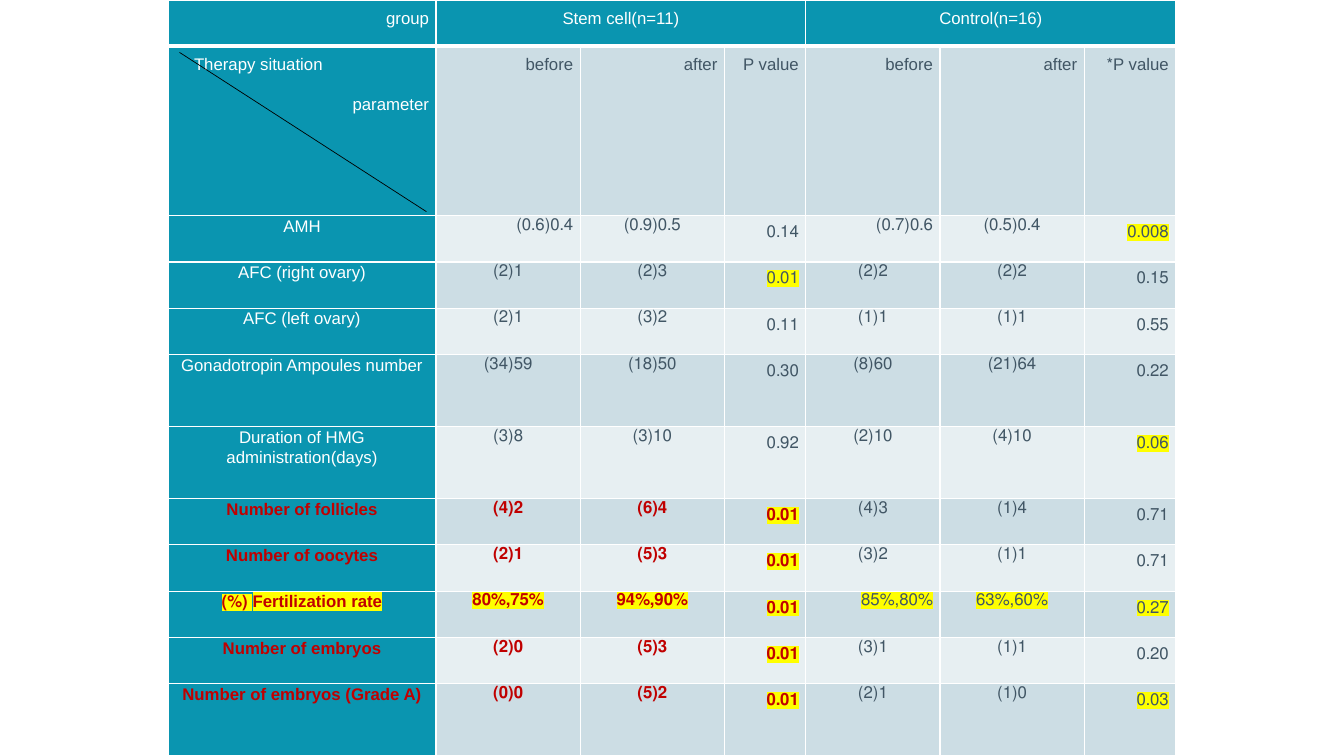
"""Builds a slide with a table comparing stem cell and control groups before and after therapy."""
import pptx
import pptx.util
import pptx.dml.color
import pptx.enum.shapes
import pptx.enum.text
import pptx.oxml.ns
import lxml.etree

Pt = pptx.util.Pt
ALIGN = pptx.enum.text.PP_ALIGN
COLORS = {"teal": "0A95B0", "dark": "CCDDE4", "light": "E7EFF2", "white": "FFFFFF",
          "slate": "415665", "red": "C00000", "yellow": "FFFF00", "black": "000000"}


def rgb(name):
    return pptx.dml.color.RGBColor.from_string(COLORS[name])


def add_text(p, text, color="slate", bold=False, highlight=False,
             align=ALIGN.CENTER, spacing=1.07, rtl=True, indent=0):
    p.alignment = align
    p.line_spacing = spacing
    p.space_after = Pt(8)
    pPr = p._p.get_or_add_pPr()
    pPr.set("rtl", str(int(rtl)))
    pPr.set("marL", str(Pt(indent)))
    r = p.add_run()
    r.text = text
    r.font.size = Pt(12)
    r.font.bold = bold
    r.font.color.rgb = rgb(color)
    if highlight:
        mark = lxml.etree.SubElement(r._r.get_or_add_rPr(), pptx.oxml.ns.qn("a:highlight"))
        lxml.etree.SubElement(mark, pptx.oxml.ns.qn("a:srgbClr"), val=COLORS["yellow"])
    r.font.name = "Arial"


prs = pptx.Presentation()
prs.slide_width, prs.slide_height = Pt(960), Pt(540)
s = prs.slides.add_slide(prs.slide_layouts[6])

col_widths = [191.5, 103, 103, 58.2, 95.8, 103, 65.5]
row_heights = [33.1, 121, 33.1, 33.1, 33.1, 51.4, 51.4, 33.1, 33.1, 33.1, 33.1, 51.4]
parameters = [
    ["AMH", "0.4(0.6)", "0.5(0.9)", "0.14", "0.6(0.7)", "0.4(0.5)", "0.008"],
    ["AFC (right ovary)", "1(2)", "3(2)", "0.01", "2(2)", "2(2)", "0.15"],
    ["AFC (left ovary)", "1(2)", "2(3)", "0.11", "1(1)", "1(1)", "0.55"],
    ["Gonadotropin Ampoules number", "59(34)", "50(18)", "0.30", "60(8)", "64(21)", "0.22"],
    ["Duration of HMG administration(days)", "8(3)", "10(3)", "0.92", "10(2)", "10(4)", "0.06"],
    ["Number of follicles", "2(4)", "4(6)", "0.01", "3(4)", "4(1)", "0.71"],
    ["Number of oocytes", "1(2)", "3(5)", "0.01", "2(3)", "1(1)", "0.71"],
    ["Fertilization rate (%)", "75%,80%", "90%,94%", "0.01", "80%,85%", "60%,63%", "0.27"],
    ["Number of embryos", "0(2)", "3(5)", "0.01", "1(3)", "1(1)", "0.20"],
    ["Number of embryos (Grade A)", "0(0)", "2(5)", "0.01", "1(2)", "0(1)", "0.03"],
]
highlighted_p_values = {"0.008", "0.01", "0.06", "0.03"}
right_aligned = {(0, 1), (0, 4), (7, 4)}

table = s.shapes.add_table(len(row_heights), len(col_widths), Pt(120), Pt(0),
                           Pt(sum(col_widths)), Pt(sum(row_heights))).table
for column, width in zip(table.columns, col_widths):
    column.width = Pt(width)
for row, height in zip(table.rows, row_heights):
    row.height = Pt(height)

for i, row in enumerate(table.rows):
    for j, cell in enumerate(row.cells):
        cell.margin_left = cell.margin_right = Pt(5)
        cell.margin_top = cell.margin_bottom = Pt(0)
        tcPr = cell._tc.get_or_add_tcPr()
        for side in ("lnL", "lnR", "lnT", "lnB"):
            width = 3 if i == 0 and side == "lnB" else 1
            ln = lxml.etree.SubElement(tcPr, pptx.oxml.ns.qn("a:" + side), w=str(Pt(width)))
            line_fill = lxml.etree.SubElement(ln, pptx.oxml.ns.qn("a:solidFill"))
            lxml.etree.SubElement(line_fill, pptx.oxml.ns.qn("a:srgbClr"), val=COLORS["white"])
        cell.fill.solid()
        cell.fill.fore_color.rgb = rgb("teal" if i == 0 or j == 0 else "dark" if i % 2 else "light")

header = {"align": ALIGN.JUSTIFY, "spacing": 1.5}
add_text(table.cell(0, 0).text_frame.paragraphs[0], "group", color="white", **header)
for j, group in ((1, "Stem cell(n=11)"), (4, "Control(n=16)")):
    table.cell(0, j).merge(table.cell(0, j + 2))
    add_text(table.cell(0, j).text_frame.paragraphs[0], group, color="white", spacing=1.5)

tf = table.cell(1, 0).text_frame
add_text(tf.paragraphs[0], "Therapy situation", color="white", align=ALIGN.LEFT,
         spacing=1.5, rtl=False, indent=13.6)
add_text(tf.add_paragraph(), "parameter", color="white", **header)
for j, label in enumerate(["before", "after", "P value", "before", "after", "P value*"], 1):
    add_text(table.cell(1, j).text_frame.paragraphs[0], label, **header)

for i, values in enumerate(parameters):
    for j, value in enumerate(values):
        emphasised = i >= 5 and j <= 3
        is_p_value = j in (3, 6)
        color = "red" if emphasised else "white" if j == 0 else "slate"
        align = (ALIGN.JUSTIFY if is_p_value
                 else ALIGN.RIGHT if (i, j) in right_aligned else ALIGN.CENTER)
        add_text(table.cell(i + 2, j).text_frame.paragraphs[0], value, color=color,
                 bold=emphasised, align=align, spacing=1.5 if is_p_value else 1.07,
                 highlight=i == 7 or is_p_value and value in highlighted_p_values)

diagonal = s.shapes.add_connector(pptx.enum.shapes.MSO_CONNECTOR.STRAIGHT,
                                  Pt(128.2), Pt(37.4), Pt(304.6), Pt(151.2))
diagonal.line.color.rgb = rgb("black")
diagonal.line.width = Pt(0.5)
lxml.etree.SubElement(diagonal._element.spPr, pptx.oxml.ns.qn("a:effectLst"))

prs.save("out.pptx")
